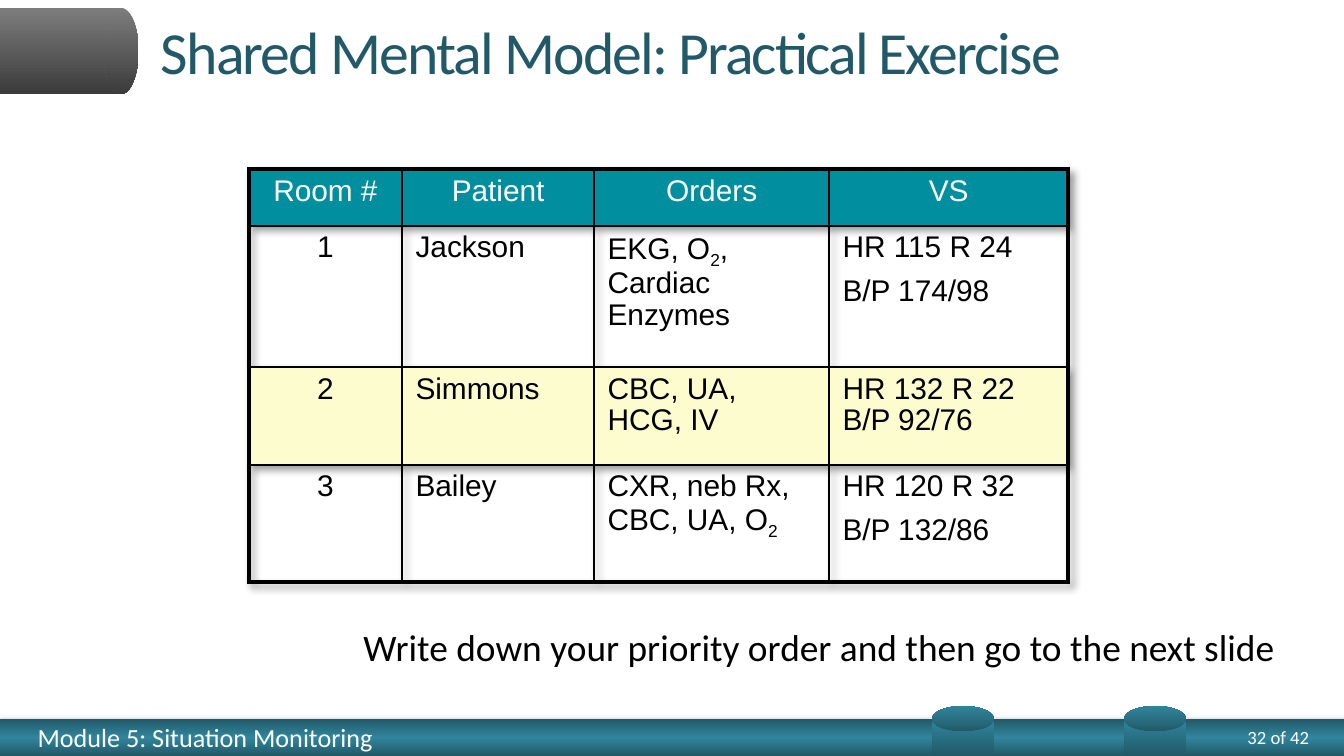
from dataclasses import dataclass

from lxml import etree
from pptx import Presentation
from pptx.dml.color import RGBColor
from pptx.enum.shapes import MSO_SHAPE
from pptx.enum.text import MSO_ANCHOR, PP_ALIGN
from pptx.oxml.ns import qn
from pptx.util import Cm, Pt

RECTANGLE, OVAL = MSO_SHAPE.RECTANGLE, MSO_SHAPE.OVAL
LEFT, CENTER, RIGHT = PP_ALIGN.LEFT, PP_ALIGN.CENTER, PP_ALIGN.RIGHT
TOP, MIDDLE = MSO_ANCHOR.TOP, MSO_ANCHOR.MIDDLE


@dataclass(frozen=True)
class Theme:
    heading_font: str = "Calibri"
    table_font: str = "Arial"
    dark_teal: str = "215968"
    light_teal: str = "31859C"
    light_gray: str = "7D7D7D"
    dark_gray: str = "3B3B3B"
    header_fill: str = "018E9F"
    highlight: str = "FCFCCE"
    white: str = "FFFFFF"
    black: str = "000000"
    title_size: float = 32
    prompt_size: float = 20
    table_size: float = 16
    footer_size: float = 14
    number_size: float = 10
    outer_border: float = 2.25
    inner_border: float = 1


def add_xml(parent, tag, **attributes):
    values = {name: str(value) for name, value in attributes.items()}
    return etree.SubElement(parent, qn(tag), values)


class SlideBuilder:
    def __init__(self, slide, theme):
        self.slide = slide
        self.theme = theme

    def style(self, paragraph, font, size, color, align):
        paragraph.alignment = align
        paragraph.font.name = font
        paragraph.font.size = Pt(size)
        paragraph.font.color.rgb = RGBColor.from_string(color)

    def shadow(self, effects, blur, distance, angle, opacity):
        outer = add_xml(effects, "a:outerShdw", blurRad=Pt(blur), dist=Pt(distance),
                        dir=angle * 60000, algn="tl", rotWithShape=0)
        color = add_xml(outer, "a:srgbClr", val=self.theme.black)
        add_xml(color, "a:alpha", val=opacity * 1000)

    def gradient_shape(self, parent, kind, box, colors, angle, rotation=0):
        """Add a borderless shape with evenly spaced gradient colours."""
        shape = parent.shapes.add_shape(kind, *map(Cm, box))
        shape.rotation = rotation
        shape.shadow.inherit = False
        shape.line.fill.background()
        shape.fill.gradient()
        shape.fill.gradient_angle = angle
        stops = shape._element.spPr.find(".//" + qn("a:gsLst"))
        stops.clear()
        for i, color in enumerate(colors):
            stop = add_xml(stops, "a:gs", pos=100000 * i // (len(colors) - 1))
            add_xml(stop, "a:srgbClr", val=color)
        return shape

    def footer_bar(self, box):
        dark, light = self.theme.dark_teal, self.theme.light_teal
        bar = self.gradient_shape(self.slide, RECTANGLE, box, [dark, light, dark], 90)
        effects = bar._element.spPr.find(qn("a:effectLst"))
        self.shadow(effects, 3.1, 1, 90, 35)

    def cylinder(self, body, cap, colors, angle, rotation=0):
        group = self.slide.shapes.add_group_shape()
        for kind, box in ((RECTANGLE, body), (OVAL, cap)):
            self.gradient_shape(group, kind, box, colors, angle, rotation)

    def text(self, box, words, size, color, align=LEFT, anchor=MIDDLE,
             inset=True, spacing=0):
        frame = self.slide.shapes.add_textbox(*map(Cm, box)).text_frame
        frame.word_wrap = True
        frame.vertical_anchor = anchor
        if not inset:
            frame.margin_left = frame.margin_right = 0
            frame.margin_top = frame.margin_bottom = 0
        paragraph = frame.paragraphs[0]
        run = paragraph.add_run()
        run.text = words
        self.style(paragraph, self.theme.heading_font, size, color, align)
        if spacing:
            run._r.get_or_add_rPr().set("spc", str(spacing * 100))

    def borders(self, cell, outer_sides):
        properties = cell._tc.get_or_add_tcPr()
        for side in "LRTB":
            outer = side in outer_sides
            width = self.theme.outer_border if outer else self.theme.inner_border
            line = add_xml(properties, f"a:ln{side}", w=Pt(width))
            fill = add_xml(line, "a:solidFill")
            add_xml(fill, "a:srgbClr", val=self.theme.black)

    def cell_text(self, cell, content, color, align):
        """Write paragraphs (\\n) and lines (\\v); underscores enclose subscripts."""
        for number, words in enumerate(content.split("\n")):
            frame = cell.text_frame
            paragraph = frame.add_paragraph() if number else frame.paragraphs[0]
            paragraph.line_spacing = 0.95
            if number:
                paragraph.space_before = Pt(0.4 * self.theme.table_size)
            for line_number, line in enumerate(words.split("\v")):
                if line_number:
                    paragraph.add_line_break()
                for i, part in enumerate(line.split("_")):
                    if not part:
                        continue
                    run = paragraph.add_run()
                    run.text = part
                    if i % 2:
                        run._r.get_or_add_rPr().set("baseline", "-25000")
            self.style(paragraph, self.theme.table_font, self.theme.table_size,
                       color, align)

    def table(self, left, top, widths, heights, rows, highlighted_row):
        frame = self.slide.shapes.add_table(
            len(rows), len(widths), Cm(left), Cm(top),
            Cm(sum(widths)), Cm(sum(heights)))
        table = frame.table
        table.first_row = table.horz_banding = False
        effects = add_xml(table._tbl.tblPr, "a:effectLst")
        table._tbl.tblPr.insert(0, effects)
        self.shadow(effects, 4, 3, 45, 40)
        for column, width in zip(table.columns, widths):
            column.width = Cm(width)
        fills = {0: self.theme.header_fill, highlighted_row: self.theme.highlight}
        last_row, last_column = len(rows) - 1, len(widths) - 1
        for r, row in enumerate(rows):
            table.rows[r].height = Cm(heights[r])
            for c, content in enumerate(row):
                cell = table.cell(r, c)
                edges = {"L": c == 0, "R": c == last_column,
                         "T": r == 0, "B": r == last_row}
                self.borders(cell, [side for side, outer in edges.items() if outer])
                if r in fills:
                    cell.fill.solid()
                    cell.fill.fore_color.rgb = RGBColor.from_string(fills[r])
                else:
                    cell.fill.background()
                color = self.theme.black if r else self.theme.white
                align = LEFT if r and c else CENTER
                self.cell_text(cell, content, color, align)


PATIENTS = [
    ["Room #", "Patient", "Orders", "VS"],
    ["1", "Jackson", "EKG, O_2_, Cardiac Enzymes", "HR 115 R 24\nB/P 174/98"],
    ["2", "Simmons", "CBC, UA, HCG, IV", "HR 132 R 22\vB/P 92/76"],
    ["3", "Bailey", "CXR, neb Rx, CBC, UA, O_2_", "HR 120 R 32\nB/P 132/86"],
]


def main():
    presentation = Presentation()
    presentation.slide_width, presentation.slide_height = Cm(25.4), Cm(14.29)
    theme = Theme()
    slide = presentation.slides.add_slide(presentation.slide_layouts[6])
    builder = SlideBuilder(slide, theme)

    footer_top, footer_height = 13.59, 0.7
    builder.footer_bar((0, footer_top, 25.4, footer_height))
    builder.text((0.71, footer_top, 13.61, footer_height),
                 "Module 5: Situation Monitoring", theme.footer_size, theme.white,
                 inset=False)
    builder.text((22.68, footer_top, 2.06, footer_height), "32 of 42",
                 theme.number_size, theme.white, RIGHT, inset=False)
    builder.cylinder((0, 0.15, 2.29, 1.63), (1.96, 0.15, 0.66, 1.63),
                     [theme.light_gray, theme.dark_gray], 270)
    for left in (17.86, 21.49):
        builder.cylinder((left, 13.36, 0.69, 1.17), (left + 0.1, 13, 0.48, 1.17),
                         [theme.dark_teal, theme.light_teal], 0, rotation=270)

    builder.text((2.79, 0, 22.28, 1.9), "Shared Mental Model: Practical Exercise",
                 theme.title_size, theme.dark_teal, spacing=-1)
    builder.table(4.7, 3.2, [2.9, 3.63, 4.44, 4.52], [1.07, 2.67, 1.85, 2.21],
                  PATIENTS, highlighted_row=2)
    builder.text((5.38, 11.68, 18.97, 1.12),
                 "Write down your priority order and then go to the next slide",
                 theme.prompt_size, theme.black, RIGHT, TOP)
    presentation.save("out.pptx")


if __name__ == "__main__":
    main()
